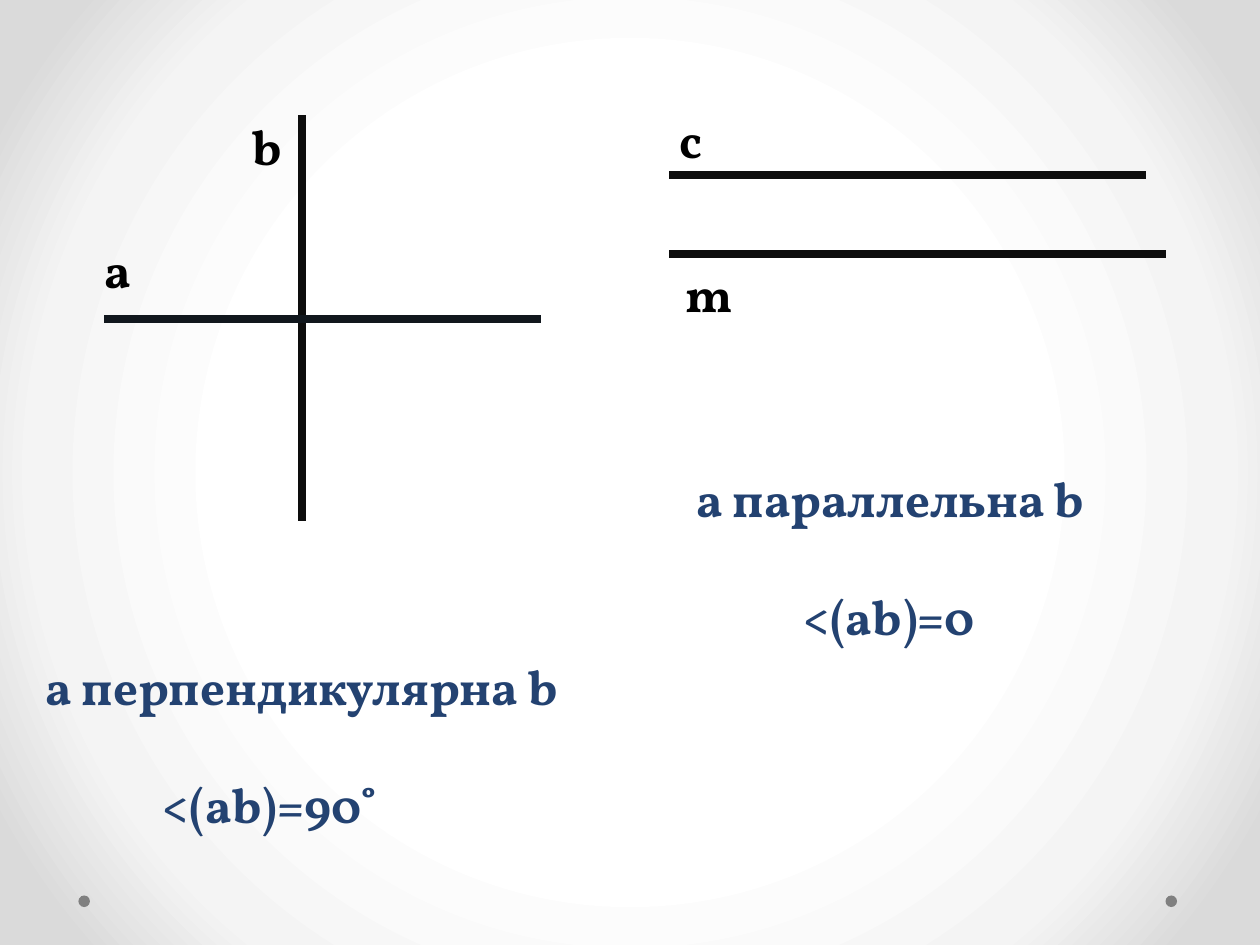
from pptx import Presentation
from pptx.dml.color import RGBColor
from pptx.enum.shapes import MSO_CONNECTOR, MSO_SHAPE
from pptx.oxml import parse_xml
from pptx.oxml.ns import nsdecls, qn
from pptx.util import Pt
from lxml import etree

STRAIGHT = MSO_CONNECTOR.STRAIGHT
OVAL = MSO_SHAPE.OVAL
BLANK = 6

COLORS = {
    "line": "0D0D0D",
    "axis": "11171D",
    "label": "000000",
    "caption": "234271",
    "dot": "808080",
}
BACKGROUND = [(50, "FFFFFF"), (76, "F4F4F4"), (92, "DADADA")]


class SlideBuilder:
    """Holds the style and the current slide; lengths are in points."""

    font = {"name": "Vollkorn", "size": Pt(28), "bold": True}
    line_width = 4.5
    line_height = 33.8

    def __init__(self, slide):
        self.s = slide

    def background(self, stops):
        """Fill the slide with a gradient that spreads from its centre."""
        gs = "".join(
            f'<a:gs pos="{pos * 1000}"><a:srgbClr val="{color}"/></a:gs>'
            for pos, color in stops
        )
        bg = self.s._element.cSld.get_or_add_bgPr()
        bg.replace(bg[0], parse_xml(
            f'<a:gradFill {nsdecls("a")} rotWithShape="1"><a:gsLst>{gs}</a:gsLst>'
            '<a:path path="circle"><a:fillToRect l="50000" t="50000" '
            'r="50000" b="50000"/></a:path></a:gradFill>'
        ))

    def dot(self, x, y, size):
        sp = self.s.shapes.add_shape(OVAL, Pt(x), Pt(y), Pt(size), Pt(size))
        sp.shadow.inherit = False
        sp.fill.solid()
        sp.fill.fore_color.rgb = RGBColor.from_string(COLORS["dot"])
        sp.line.fill.background()

    def line(self, x1, y1, x2, y2, color="line"):
        sp = self.s.shapes.add_connector(STRAIGHT, Pt(x1), Pt(y1), Pt(x2), Pt(y2))
        sp.line.width = Pt(self.line_width)
        sp.line.color.rgb = RGBColor.from_string(COLORS[color])
        etree.SubElement(sp._element.spPr, qn("a:effectLst"))

    def text_frame(self, x, y, w, h, wrap):
        tf = self.s.shapes.add_textbox(Pt(x), Pt(y), Pt(w), Pt(h)).text_frame
        tf.word_wrap = wrap
        tf.margin_left = tf.margin_right = 0
        return tf

    def run(self, p, text, color):
        r = p.add_run()
        r.text = text
        for name, value in self.font.items():
            setattr(r.font, name, value)
        r.font.color.rgb = RGBColor.from_string(COLORS[color])

    def label(self, text, x, y):
        tf = self.text_frame(x, y, 28, 41, wrap=True)
        self.run(tf.paragraphs[0], text, "label")

    def caption(self, relation, angle, x, y, indent):
        """Write the relation and, one line further down, the indented angle."""
        tf = self.text_frame(x, y, 310, 108.7, wrap=True)
        self.run(tf.paragraphs[0], relation, "caption")
        p = tf.add_paragraph()
        p.space_before = Pt(self.line_height)
        p._p.get_or_add_pPr().set("marL", str(Pt(indent)))
        self.run(p, angle, "caption")


def main():
    prs = Presentation()
    prs.slide_width, prs.slide_height = Pt(720), Pt(540)
    b = SlideBuilder(prs.slides.add_slide(prs.slide_layouts[BLANK]))
    b.background(BACKGROUND)

    for x in (666, 44.8):
        b.dot(x, 511.7, 6.6)

    # Perpendicular lines
    b.line(172.8, 66, 172.8, 298)
    b.line(59.5, 182.3, 309, 182.3, "axis")

    # Parallel lines
    b.line(382.5, 100, 655, 100)
    b.line(382.5, 145.3, 666, 145.3)

    for text, x, y in [
        ("a", 59.8, 133.2),
        ("b", 144.3, 63.2),
        ("c", 388.4, 59),
        ("m", 392, 147),
    ]:
        b.label(text, x, y)

    b.caption("a перпендикулярна b", "<(ab)=90˚", 25.9, 371.5, 67)
    b.caption("а параллельна b", "<(аb)=0", 398, 264.2, 61)

    prs.save("out.pptx")


if __name__ == "__main__":
    main()
